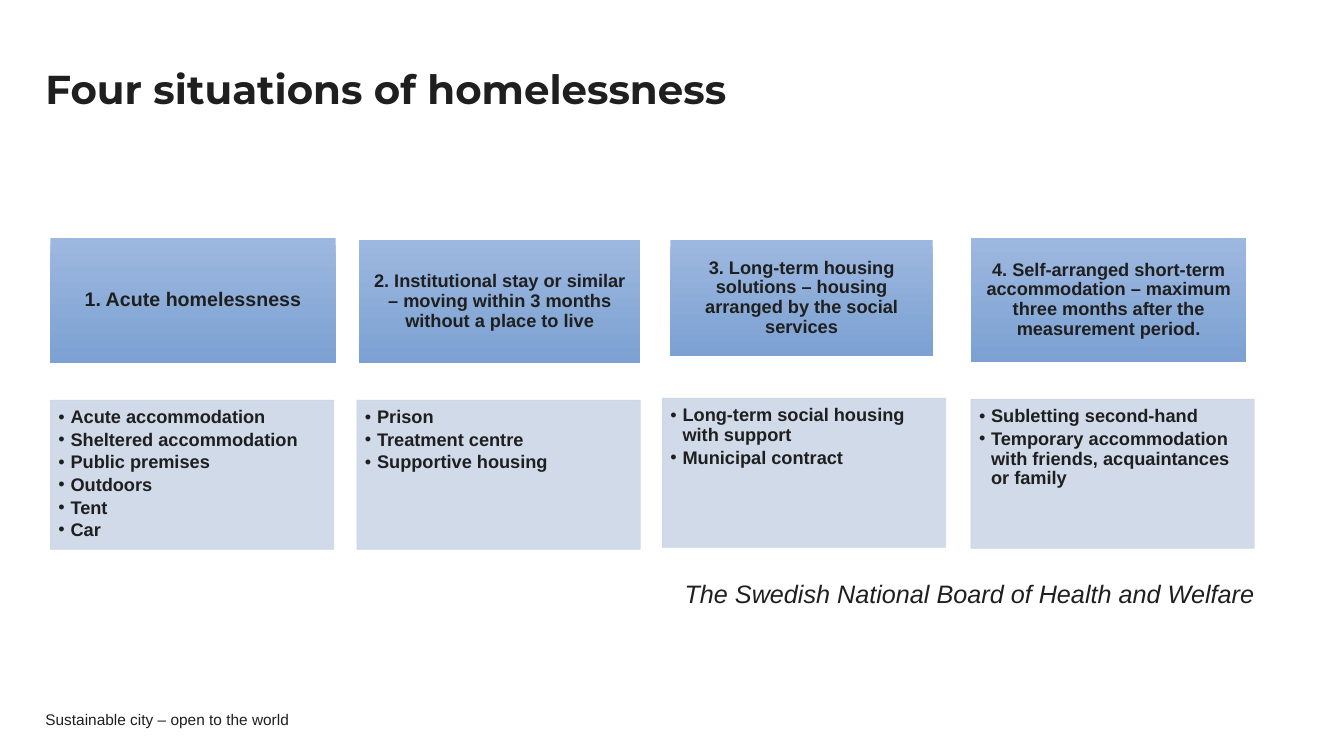
from lxml.etree import SubElement
from pptx import Presentation
from pptx.dml.color import RGBColor
from pptx.enum.shapes import MSO_SHAPE as Shape
from pptx.enum.text import MSO_ANCHOR as Anchor, MSO_AUTO_SIZE as AutoSize, PP_ALIGN as Align
from pptx.oxml.ns import qn
from pptx.util import Inches, Pt

INK = "1F1F1F"
HEADER_TOP_COLOR, HEADER_BOTTOM_COLOR = "9DB8E0", "7CA1D2"
LIST_COLOR = "CCD6E7"

# Heading, heading size, heading box, list items, list left and top
SITUATIONS = [
    ("1. Acute homelessness", 14, (0.5, 2.36, 2.83, 1.24),
     ["Acute accommodation", "Sheltered accommodation", "Public premises",
      "Outdoors", "Tent", "Car"], (0.5, 3.97)),
    ("2. Institutional stay or similar – moving within 3 months without a place to live",
     13, (3.56, 2.38, 2.79, 1.22),
     ["Prison", "Treatment centre", "Supportive housing"], (3.54, 3.97)),
    ("3. Long-term housing solutions – housing arranged by the social services",
     13, (6.65, 2.38, 2.6, 1.15),
     ["Long-term social housing with support", "Municipal contract"], (6.57, 3.95)),
    ("4. Self-arranged short-term accommodation – maximum three months after "
     "the measurement period.", 13, (9.63, 2.36, 2.73, 1.23),
     ["Subletting second-hand",
      "Temporary accommodation with friends, acquaintances or family"], (9.63, 3.96)),
]
LIST_SIZE = (2.81, 1.48)


def rgb(color):
    return RGBColor.from_string(color)


def place(shape, box):
    shape.left, shape.top, shape.width, shape.height = map(Inches, box)


def set_frame(shape, anchor, insets):
    """Set anchor and left, top, right and bottom insets in inches."""
    frame = shape.text_frame
    frame.word_wrap = True
    frame.auto_size = AutoSize.NONE
    frame.vertical_anchor = anchor
    (frame.margin_left, frame.margin_top,
     frame.margin_right, frame.margin_bottom) = map(Inches, insets)
    return frame


def style_paragraph(paragraph, size, align=Align.LEFT, spacing=None,
                    name="Arial", bold=False, italic=False):
    paragraph.alignment = align
    paragraph.line_spacing = spacing
    font = paragraph.font
    font.name, font.size = name, Pt(size)
    font.bold, font.italic = bold, italic
    font.color.rgb = rgb(INK)


def add_bullet(paragraph):
    properties = paragraph._p.get_or_add_pPr()
    properties.set("marL", str(Inches(0.12)))
    properties.set("indent", str(-Inches(0.12)))
    SubElement(properties, qn("a:buChar"), char="•")


def set_opacity(fill, percent):
    color = fill._xPr.find(qn("a:solidFill"))[0]
    SubElement(color, qn("a:alpha"), val=str(percent * 1000))


def add_title(title, box):
    place(title, box)
    frame = set_frame(title, Anchor.TOP, (0, 0.05, 0, 0.05))
    frame.text = "Four situations of homelessness"
    style_paragraph(frame.paragraphs[0], 28.8, spacing=0.9, name="Montserrat", bold=True)


def add_heading(slide, box, text, size):
    heading = slide.shapes.add_shape(Shape.RECTANGLE, *map(Inches, box))
    heading.shadow.inherit = False
    heading.line.fill.background()
    heading.fill.gradient()
    heading.fill.gradient_angle = 270
    for stop, color in zip(heading.fill.gradient_stops,
                           (HEADER_TOP_COLOR, HEADER_BOTTOM_COLOR)):
        stop.color.rgb = rgb(color)
    frame = set_frame(heading, Anchor.MIDDLE, (0.1, 0.06, 0.1, 0.06))
    frame.text = text
    style_paragraph(frame.paragraphs[0], size, Align.CENTER, 0.9, bold=True)


def fill_list(body, box, items):
    place(body, box)
    body.fill.solid()
    body.fill.fore_color.rgb = rgb(LIST_COLOR)
    set_opacity(body.fill, 90)
    body.line.width = Pt(0.5)
    body.line.color.rgb = rgb(LIST_COLOR)
    set_opacity(body.line.fill, 90)
    frame = set_frame(body, Anchor.TOP, (0.08, 0.08, 0.1, 0.11))
    frame.text = "\n".join(items)
    for paragraph in frame.paragraphs:
        add_bullet(paragraph)
        paragraph.space_before, paragraph.space_after = Pt(0), Pt(2)
        style_paragraph(paragraph, 13, spacing=0.9, bold=True)


def add_label(slide, box, text, size, anchor, insets, **style):
    label = slide.shapes.add_textbox(*map(Inches, box))
    frame = set_frame(label, anchor, insets)
    frame.text = text
    style_paragraph(frame.paragraphs[0], size, **style)


def main():
    presentation = Presentation()
    presentation.slide_width, presentation.slide_height = Inches(13.33), Inches(7.5)
    comparison_layout = presentation.slide_layouts[4]
    slide = presentation.slides.add_slide(comparison_layout)
    title, *bodies = slide.placeholders

    add_title(title, (0.45, 0.64, 10.03, 0.96))
    for body, situation in zip(bodies, SITUATIONS):
        heading, size, heading_box, items, list_corner = situation
        add_heading(slide, heading_box, heading, size)
        fill_list(body, list_corner + LIST_SIZE, items)
    add_label(slide, (6.34, 5.69, 6.55, 0.4),
              "The Swedish National Board of Health and Welfare", 18,
              Anchor.TOP, (0.1, 0.05, 0.1, 0.05), align=Align.CENTER, italic=True)
    add_label(slide, (0.45, 7.06, 9.45, 0.16),
              "Sustainable city – open to the world", 11, Anchor.MIDDLE, (0, 0, 0, 0))
    presentation.save("out.pptx")


if __name__ == "__main__":
    main()
